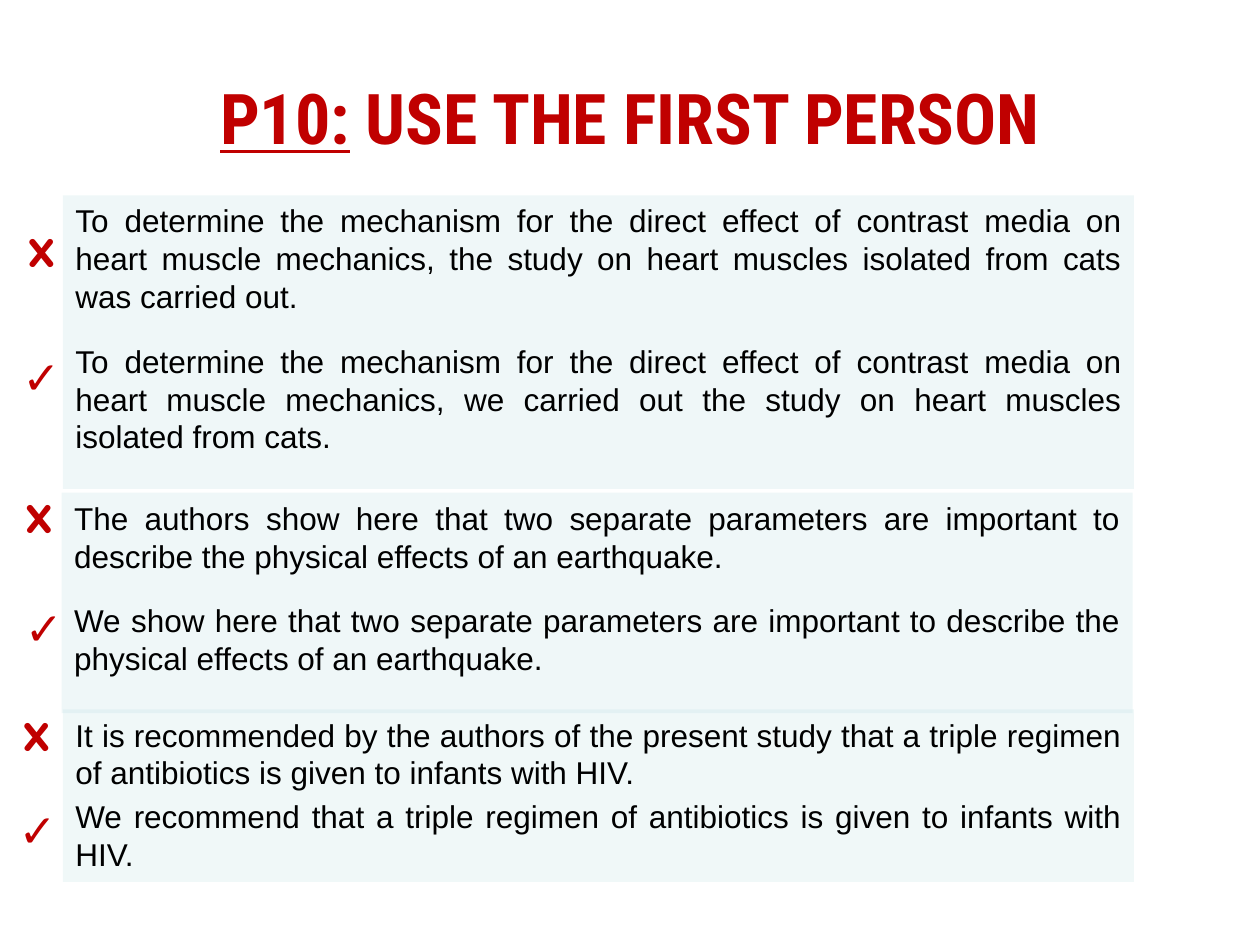
from lxml import etree
from pptx import Presentation
from pptx.dml.color import RGBColor
from pptx.enum import shapes, text
from pptx.oxml.ns import qn
from pptx.util import Inches, Pt

RED = "C00000"


def add_run(p, content, font, size, color, bold=False):
    r = p.add_run()
    r.text = content
    r.font.name = font
    r.font.size = Pt(size)
    r.font.bold = bold
    r.font.color.rgb = RGBColor.from_string(color)
    return r


prs = Presentation()
prs.slide_width, prs.slide_height = Inches(10), Inches(7.5)
s = prs.slides.add_slide(prs.slide_layouts[5])

title = s.shapes.title
title.left, title.top = Inches(0.5), Inches(0.3)
title.width, title.height = Inches(9), Inches(1.25)
tf = title.text_frame
tf.vertical_anchor = text.MSO_ANCHOR.MIDDLE
p = tf.paragraphs[0]
p.alignment = text.PP_ALIGN.CENTER
add_run(p, "P10:", "Roboto Condensed", 40, RED, True).font.underline = True
add_run(p, " USE THE FIRST PERSON", "Roboto Condensed", 40, RED, True)

# left, top, height, opacity in %, space between (pt), wrong and right wording
examples = [
    (0.5, 1.55, 2.33, 23, 15.4,
     "To determine the mechanism for the direct effect of contrast media on heart "
     "muscle mechanics, the study on heart muscles isolated from cats was carried out.",
     "To determine the mechanism for the direct effect of contrast media on heart "
     "muscle mechanics, we carried out the study on heart muscles isolated from cats."),
    (0.49, 3.91, 1.75, 23, 15.4,
     "The authors show here that two separate parameters are important to describe "
     "the physical effects of an earthquake.",
     "We show here that two separate parameters are important to describe "
     "the physical effects of an earthquake."),
    (0.5, 5.63, 1.37, 22, 3.6,
     "It is recommended by the authors of the present study that a triple regimen "
     "of antibiotics is given to infants with HIV.",
     "We recommend that a triple regimen of antibiotics is given to infants with HIV."),
]
for left, top, height, opacity, gap, wrong, right in examples:
    sp = s.shapes.add_shape(shapes.MSO_SHAPE.RECTANGLE, Inches(left), Inches(top),
                            Inches(8.5), Inches(height))
    sp.shadow.inherit = False
    sp.line.fill.background()
    sp.fill.solid()
    sp.fill.fore_color.rgb = RGBColor.from_string("BBE0E3")
    color = sp._element.spPr.find(qn("a:solidFill"))[0]
    etree.SubElement(color, qn("a:alpha")).set("val", str(opacity * 1000))
    tf = sp.text_frame
    tf.word_wrap = True
    tf.vertical_anchor = text.MSO_ANCHOR.TOP
    for i, sentence in enumerate((wrong, right)):
        p = tf.add_paragraph() if i else tf.paragraphs[0]
        p.alignment = text.PP_ALIGN.JUSTIFY
        p.space_before = Pt(gap if i else 0)
        add_run(p, sentence, "Arial", 18, "000000")

# symbol, size, width, height, positions
marks = [
    ("✓", 26, 0.56, 0.54, [(0.08, 2.72), (0.1, 4.71), (0.05, 6.32)]),
    ("x", 30, 0.37, 0.61, [(0.13, 1.66), (0.11, 3.77), (0.09, 5.5)]),
]
for symbol, size, width, height, positions in marks:
    for left, top in positions:
        box = s.shapes.add_textbox(Inches(left), Inches(top), Inches(width), Inches(height))
        tf = box.text_frame
        tf.word_wrap = True
        tf.auto_size = text.MSO_AUTO_SIZE.SHAPE_TO_FIT_TEXT
        add_run(tf.paragraphs[0], symbol, "Quicksand", size, RED, True)

prs.save("out.pptx")
